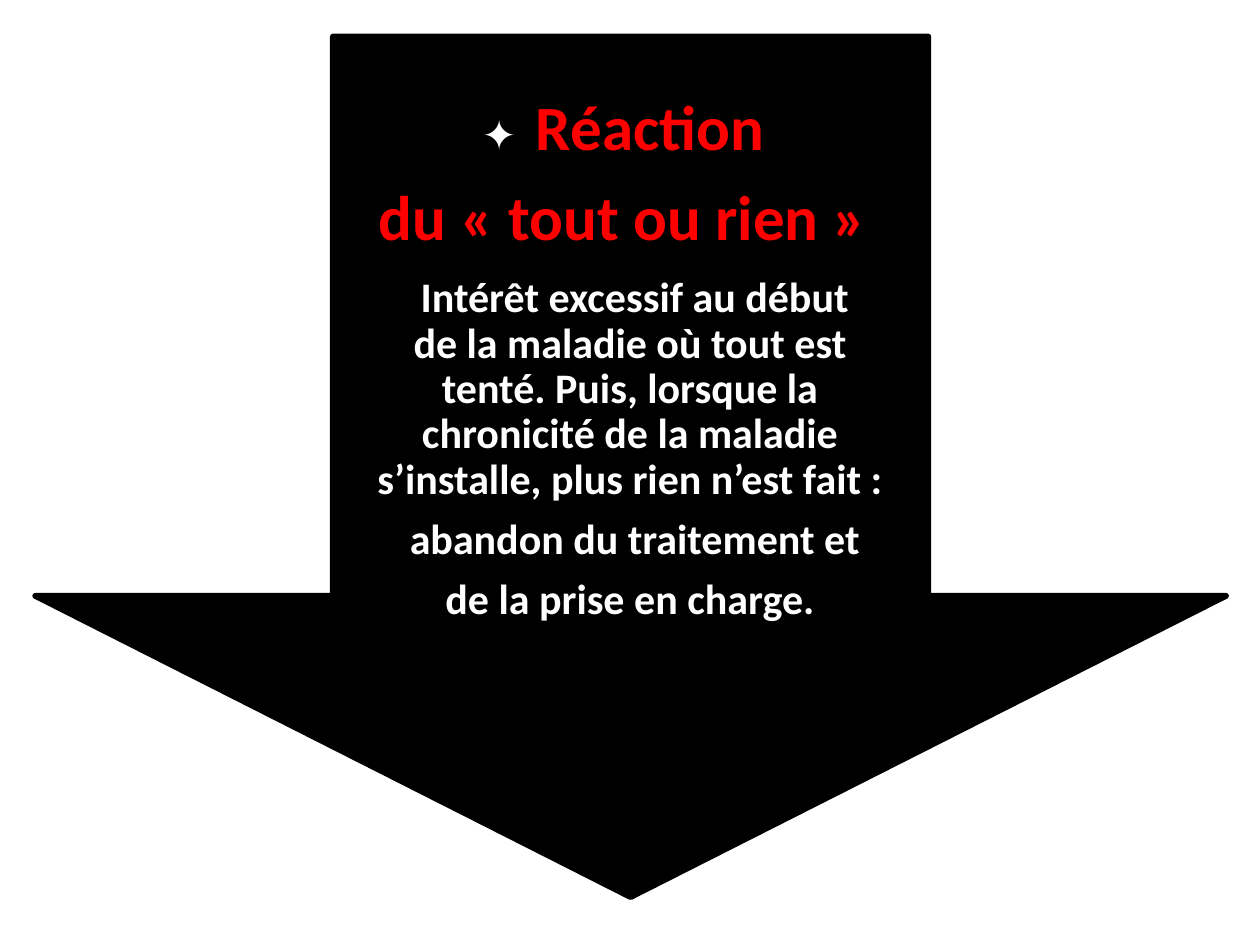
from dataclasses import dataclass

from pptx import Presentation
from pptx.dml.color import RGBColor
from pptx.enum.shapes import MSO_SHAPE
from pptx.enum.text import MSO_ANCHOR, PP_ALIGN
from pptx.util import Inches, Pt


@dataclass(frozen=True)
class Theme:
    font: str = "Calibri"
    black: RGBColor = RGBColor(0, 0, 0)
    white: RGBColor = RGBColor(255, 255, 255)
    red: RGBColor = RGBColor(255, 0, 0)
    title: int = 36
    body: int = 24
    edge: float = 3.35
    lead: float = 0.9
    gap: float = 0.35


THEME = Theme()
BODY = (
    " Intérêt excessif au début\vde la maladie où tout est\v"
    "tenté. Puis, lorsque la chronicité de la maladie "
    "s’installe, plus rien n’est fait :",
    " abandon du traitement et",
    " de la prise en charge. ",
)


def add_arrow(slide, left, top, width, height):
    arrow = slide.shapes.add_shape(
        MSO_SHAPE.DOWN_ARROW,
        Inches(left), Inches(top), Inches(width), Inches(height))
    arrow.adjustments[0] = 0.5
    arrow.adjustments[1] = 0.35
    arrow.shadow.inherit = False
    arrow.fill.solid()
    arrow.fill.fore_color.rgb = THEME.black
    arrow.line.color.rgb = THEME.black
    arrow.line.width = Pt(THEME.edge)


def add_frame(slide, left, top, width, height):
    box = slide.shapes.add_textbox(
        Inches(left), Inches(top), Inches(width), Inches(height))
    frame = box.text_frame
    frame.word_wrap = True
    frame.vertical_anchor = MSO_ANCHOR.MIDDLE
    frame.margin_left = frame.margin_right = frame.margin_top = Inches(0.19)
    frame.margin_bottom = Inches(0.69)
    return frame


def style_run(run, size, color):
    run.font.name = THEME.font
    run.font.bold = True
    run.font.size = Pt(size)
    run.font.color.rgb = color


def fill_line(line, text, size, color):
    line.text = text
    line.alignment = PP_ALIGN.CENTER
    line.line_spacing = THEME.lead
    line.space_after = Pt(size * THEME.gap)
    for run in line.runs:
        style_run(run, size, color)


def add_text(frame):
    first = frame.paragraphs[0]
    fill_line(first, "✦  ", THEME.title, THEME.white)
    style_run(first.runs[0], THEME.body, THEME.white)
    title = first.add_run()
    title.text = "Réaction "
    style_run(title, THEME.title, THEME.red)
    fill_line(frame.add_paragraph(), "du « tout ou rien » ",
              THEME.title, THEME.red)
    for text in BODY:
        fill_line(frame.add_paragraph(), text, THEME.body, THEME.white)


def main():
    deck = Presentation()
    deck.slide_width = Inches(10)
    deck.slide_height = Inches(7.5)
    slide = deck.slides.add_slide(deck.slide_layouts[6])
    add_arrow(slide, 0.28, 0.29, 9.45, 6.83)
    add_text(add_frame(slide, 2.64, 0.29, 4.72, 5.63))
    deck.save("out.pptx")


if __name__ == "__main__":
    main()
